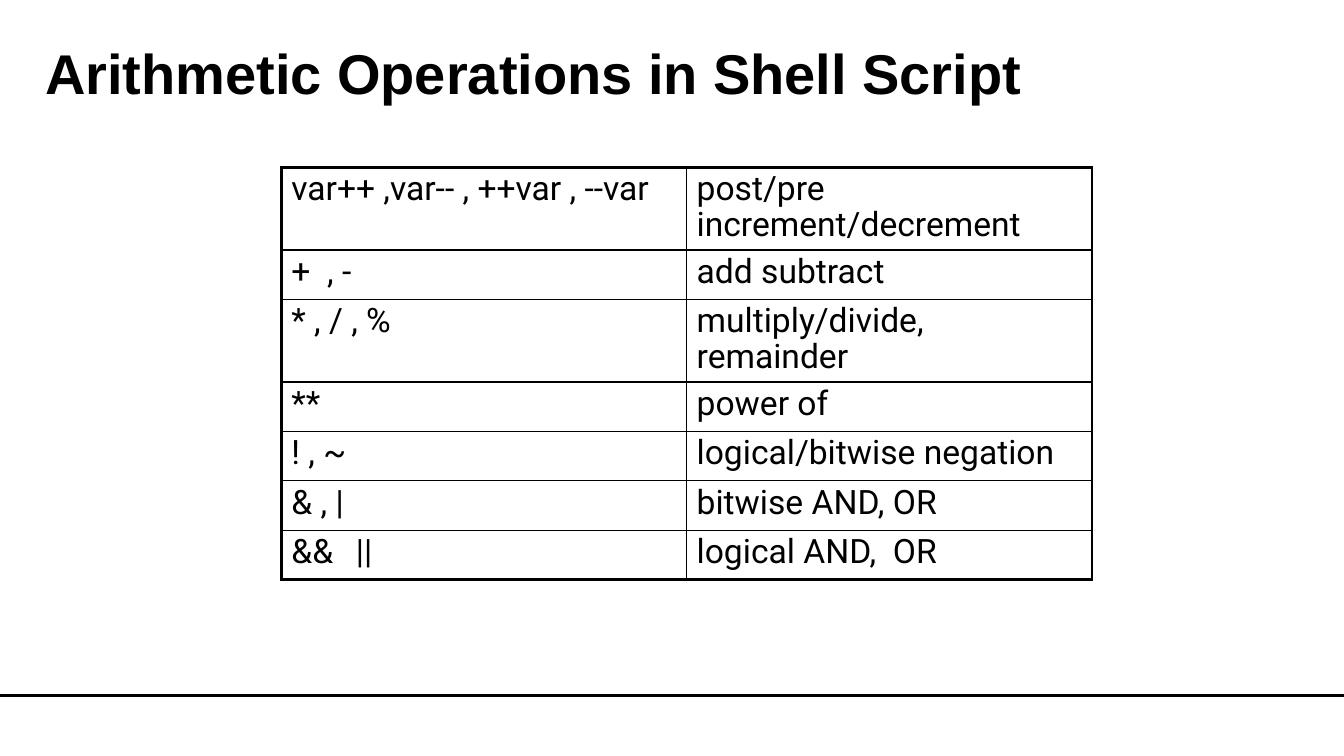
from lxml import etree
from pptx import Presentation
from pptx.dml.color import RGBColor
from pptx.enum import shapes, text
from pptx.oxml import ns
from pptx.util import Inches, Pt

BLACK = RGBColor(0, 0, 0)
WHITE = RGBColor(255, 255, 255)
THIN, THICK = Pt(1), Pt(2.25)

OPERATIONS = [
    ("var++ ,var-- , ++var , --var", "post/pre increment/decrement", 0.82),
    ("+  , -", "add subtract", 0.49),
    ("* , / , %", "multiply/divide, remainder", 0.82),
    ("**", "power of", 0.49),
    ("! , ~", "logical/bitwise negation", 0.49),
    ("& , |", "bitwise AND, OR", 0.49),
    ("&&\t||", "logical AND,  OR", 0.49),
]


def set_borders(cell, widths):
    properties = cell._tc.get_or_add_tcPr()
    for position, (side, width) in enumerate(widths.items()):
        line = etree.Element(ns.qn(f"a:ln{side}"), w=str(int(width)))
        fill = etree.SubElement(line, ns.qn("a:solidFill"))
        etree.SubElement(fill, ns.qn("a:srgbClr"), val=str(BLACK))
        properties.insert(position, line)


def style_paragraph(paragraph, font_name, size, bold=False):
    paragraph.line_spacing = 0.9
    paragraph.font.name = font_name
    paragraph.font.size = Pt(size)
    paragraph.font.bold = bold
    paragraph.font.color.rgb = BLACK


presentation = Presentation()
presentation.slide_width = Inches(13.33)
presentation.slide_height = Inches(7.5)
slide = presentation.slides.add_slide(presentation.slide_layouts[6])
slide.background.fill.solid()
slide.background.fill.fore_color.rgb = WHITE

# Footer rule
footer_rule = slide.shapes.add_connector(
    shapes.MSO_CONNECTOR.STRAIGHT, 0, Inches(6.9), Inches(13.33), Inches(6.9))
footer_rule.line.color.rgb = BLACK
footer_rule.line.width = Pt(2)
etree.SubElement(footer_rule._element.spPr, ns.qn("a:effectLst"))

# Title
title = slide.shapes.add_textbox(Inches(0.35), Inches(0.41), Inches(11.43), Inches(1.25))
title.text_frame.word_wrap = True
title.text_frame.vertical_anchor = text.MSO_ANCHOR.TOP
title.text_frame.text = "Arithmetic Operations in Shell Script"
style_paragraph(title.text_frame.paragraphs[0], "Arial", 40, bold=True)

# Operator table
table = slide.shapes.add_table(
    len(OPERATIONS), 2, Inches(2.79), Inches(1.66), Inches(8.04), Inches(4.09)).table
table.first_row = False
table.horz_banding = False
last_row = len(OPERATIONS) - 1

for row, (operators, meaning, height) in enumerate(OPERATIONS):
    table.rows[row].height = Inches(height)
    for column, wording in enumerate((operators, meaning)):
        cell = table.cell(row, column)
        cell.text = wording
        cell.fill.background()
        set_borders(cell, {
            "L": THICK if column == 0 else THIN,
            "R": THICK if column == 1 else THIN,
            "T": THICK if row == 0 else THIN,
            "B": THICK if row == last_row else THIN,
        })
        paragraph = cell.text_frame.paragraphs[0]
        if "\t" in wording:
            tabs = etree.SubElement(paragraph._p.get_or_add_pPr(), ns.qn("a:tabLst"))
            etree.SubElement(tabs, ns.qn("a:tab"), pos=str(Inches(0.64)), algn="l")
        style_paragraph(paragraph, "Roboto", 24)

presentation.save("out.pptx")
